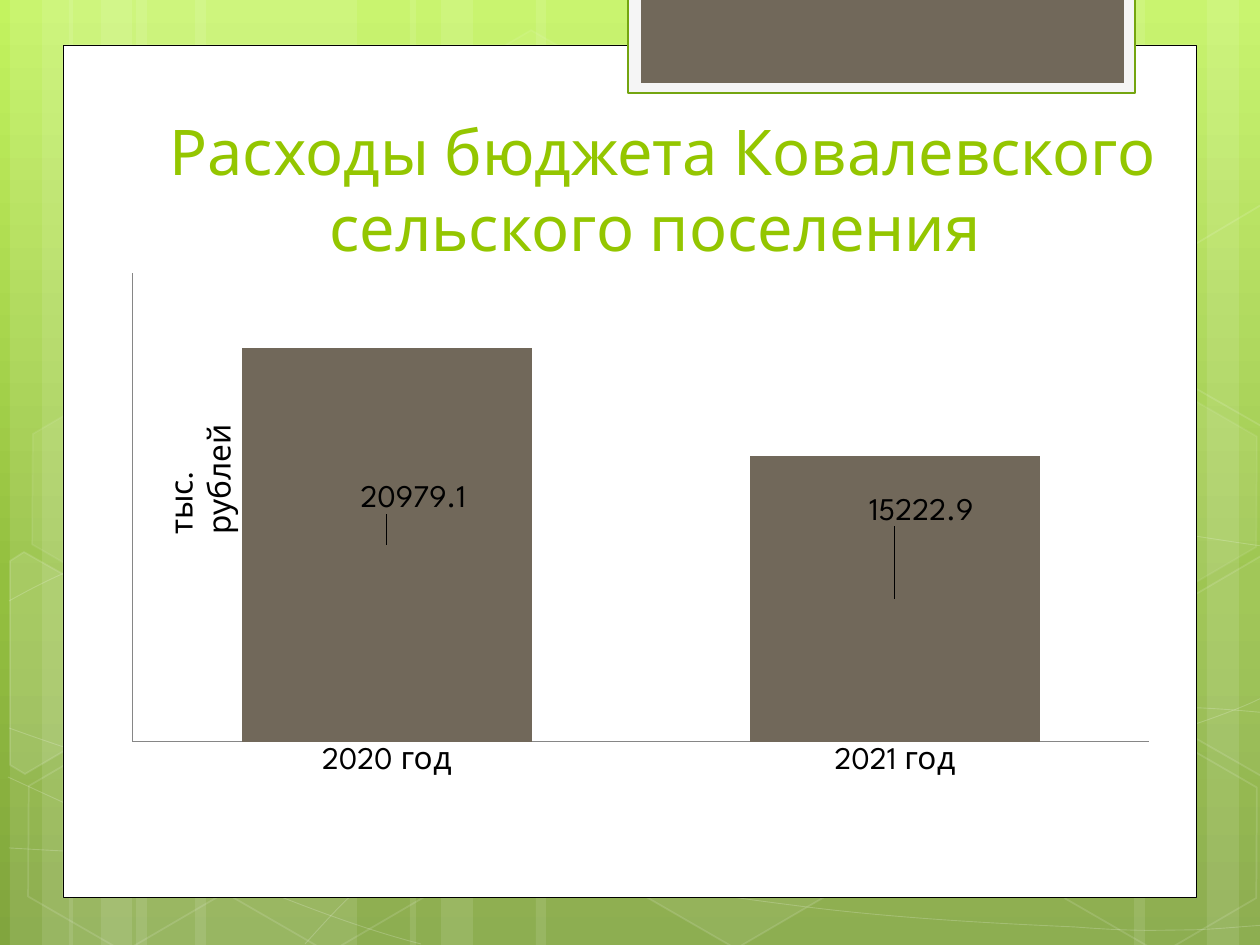
import copy
from pptx import Presentation
from pptx import util as u
from pptx.chart.data import CategoryChartData
from pptx.dml.color import RGBColor
from pptx.enum import chart as ch, shapes, text
from pptx.oxml import parse_xml
from pptx.oxml.ns import nsdecls, qn

PX = 914400 / 126
THEME = {
    "font": "League Spartan", "title": 36, "body": 18,
    "white": "FFFFFF", "black": "000000", "green": "94C600", "edge": "74A510",
    "brown": "71685A", "tab": "F5F5F5", "axis": "868686",
    "sky": [("C3F35F", 0), ("93BF3F", 0.62), ("81A53E", 1)],
}


def paint(sp, fill=None, alpha=100, line=None, width=1, line_alpha=100):
    sp.shadow.inherit = False
    for fmt, color, a in ((sp.fill, fill, alpha), (sp.line.fill, line, line_alpha)):
        if not color:
            fmt.background()
            continue
        fmt.solid()
        fmt.fore_color.rgb = RGBColor.from_string(THEME[color])
        if a < 100:
            clr = fmt._xPr.find(qn("a:solidFill"))[0]
            clr.append(parse_xml(f'<a:alpha {nsdecls("a")} val="{a * 1000}"/>'))
    if line:
        sp.line.width = u.Pt(width)


def write(words, box, size, color, align=text.PP_ALIGN.LEFT,
          anchor=text.MSO_ANCHOR.TOP, rotation=0):
    sp = s.shapes.add_textbox(*[round(v * PX) for v in box])
    sp.rotation = rotation
    tf = sp.text_frame
    tf.word_wrap = True
    tf.vertical_anchor = anchor
    p = tf.paragraphs[0]
    p.alignment = align
    r = p.add_run()
    r.text = words
    r.font.name = THEME["font"]
    r.font.size = u.Pt(THEME[size])
    r.font.color.rgb = RGBColor.from_string(THEME[color])


prs = Presentation()
prs.slide_width, prs.slide_height = round(1260 * PX), round(945 * PX)
s = prs.slides.add_slide(prs.slide_layouts[6])

bg = s.background.fill
bg.gradient()
bg.gradient_angle = 270
gs_list = bg.gradient_stops[0]._gs.getparent()
gs_list.insert(1, copy.deepcopy(gs_list[0]))
for stop, (color, pos) in zip(bg.gradient_stops, THEME["sky"]):
    stop.color.rgb = RGBColor.from_string(color)
    stop.position = pos

stripes = [(136, 221), (10, 63), (42, 105), (195, 221), (69, 63), (101, 105),
           (924, 221), (1207, 63), (1134, 105), (536, 388), (410, 63), (441, 105)]
for x, w in stripes:
    sp = s.shapes.add_shape(shapes.MSO_SHAPE.RECTANGLE, round(x * PX), 0,
                            round(w * PX), prs.slide_height)
    paint(sp, "white", 10)

waves = [
    [(9, 848), (77, 852), (145, 856), (239, 854), (334, 853), (451, 851), (577, 838),
     (703, 825), (882, 801), (998, 777), (1113, 753), (1231, 716), (1269, 694)],
    [(9, 601), (45, 581), (82, 562), (152, 543), (224, 521), (326, 496), (437, 488),
     (549, 479), (685, 478), (824, 488), (963, 497), (1193, 537), (1269, 547)],
    [(8, 777), (160, 847), (311, 916), (421, 944)],
    [(9, 728), (48, 742), (88, 756), (161, 776), (234, 795), (344, 827), (450, 848),
     (554, 869), (687, 892), (791, 905), (896, 919), (1008, 924), (1075, 927),
     (1140, 932), (1158, 930), (1191, 930), (1222, 929), (1246, 926), (1269, 925)],
    [(305, 944), (328, 919), (350, 893), (381, 871), (411, 848), (454, 823), (489, 805),
     (524, 788), (546, 780), (592, 767), (638, 755), (722, 737), (766, 728),
     (811, 719), (818, 719), (857, 717), (896, 713), (958, 709), (1000, 708),
     (1045, 707), (1116, 708), (1116, 708), (1144, 708), (1173, 708), (1201, 708),
     (1223, 709), (1245, 711), (1256, 712), (1268, 713), (1264, 713), (1268, 713)],
]
for wave in waves:
    fb = s.shapes.build_freeform(*wave[0], scale=PX)
    fb.add_line_segments(wave[1:], close=False)
    sp = fb.convert_to_shape()
    outline = next(sp._element.iter(qn("a:path")))
    segments = outline.findall(qn("a:lnTo"))
    for i in range(0, len(segments), 3):
        curve = parse_xml(f'<a:cubicBezTo {nsdecls("a")}/>')
        for segment in segments[i:i + 3]:
            curve.append(segment[0])
            outline.remove(segment)
        outline.append(curve)
    paint(sp, line="white", width=0.5, line_alpha=20)

hexagons = [(421, 45, 4, 8), (626, 742, 6, 12), (14, 745, 0, 12), (18, 393, 7, 8),
            (219, 746, 0, 12), (949, 571, 10, 12), (1051, 747, 0, 12), (1051, 396, 7, 8)]
for x, y, alpha, line_alpha in hexagons:
    sp = s.shapes.add_shape(shapes.MSO_SHAPE.HEXAGON,
                            *[round(v * PX) for v in (x, y, 220, 192)])
    sp.adjustments[0], sp.adjustments[1] = 0.285, 1.155
    sp.rotation = 30
    paint(sp, "white" if alpha else None, alpha, "white", 1, line_alpha)

cut_hexagons = [
    ([(10, 561), (24, 552), (121, 607), (120, 718), (25, 774), (10, 765)], 10),
    ([(1167, 611), (1261, 556), (1271, 562), (1271, 772), (1263, 777), (1167, 722)], 4),
    ([(1167, 261), (1261, 205), (1273, 212), (1271, 422), (1263, 427), (1167, 372)], 0),
]
for points, alpha in cut_hexagons:
    fb = s.shapes.build_freeform(*points[0], scale=PX)
    fb.add_line_segments(points[1:])
    paint(fb.convert_to_shape(), "white" if alpha else None, alpha, "white", 1, 12)

panels = [((63, 45, 1134, 853), "white", "black", 0.5),
          ((628, -3, 507, 96), "tab", "edge", 1.25),
          ((641, -3, 483, 86), "brown", None, 0)]
for box, fill, line, width in panels:
    sp = s.shapes.add_shape(shapes.MSO_SHAPE.RECTANGLE, *[round(v * PX) for v in box])
    paint(sp, fill, line=line, width=width)

write("Расходы бюджета Ковалевского сельского поселения ", (68, 194, 1190, 76),
      "title", "green", text.PP_ALIGN.CENTER, text.MSO_ANCHOR.BOTTOM)

data = CategoryChartData()
data.categories = ["2020 год", "2021 год"]
data.add_series("Series 1", (20979.1, 15222.9))
chart = s.shapes.add_chart(ch.XL_CHART_TYPE.COLUMN_STACKED,
                           *[round(v * PX) for v in (114, 264, 1052, 620)], data).chart
chart.has_legend = chart.has_title = False
chart.font.name = THEME["font"]
chart.font.size = u.Pt(THEME["body"])
chart.font.color.rgb = RGBColor.from_string(THEME["black"])
for axis in (chart.category_axis, chart.value_axis):
    axis.has_major_gridlines = False
    axis.major_tick_mark = axis.minor_tick_mark = ch.XL_TICK_MARK.NONE
    axis.format.line.color.rgb = RGBColor.from_string(THEME["axis"])
    axis.format.line.width = u.Pt(0.5)
chart.value_axis.tick_label_position = ch.XL_TICK_LABEL_POSITION.NONE
chart.value_axis.minimum_scale, chart.value_axis.maximum_scale = 0, 25000

plot = chart.plots[0]
plot.gap_width, plot.overlap = 75, 100
plot.vary_by_categories = False
series = plot.series[0]
series.format.fill.solid()
series.format.fill.fore_color.rgb = RGBColor.from_string(THEME["brown"])
labels = series.data_labels
labels.show_value = True
for i, (x, y) in enumerate([(0.025, -0.073), (0.025, -0.14)]):
    series.points[i].data_label.position = ch.XL_LABEL_POSITION.CENTER
    label = labels._element.findall(qn("c:dLbl"))[i]
    label.find(qn("c:idx")).addnext(parse_xml(
        f'<c:layout {nsdecls("c")}><c:manualLayout><c:x val="{x}"/><c:y val="{y}"/>'
        '</c:manualLayout></c:layout>'))
for leader in labels._element.findall(qn("c:showLeaderLines")):
    labels._element.remove(leader)
labels._element.append(parse_xml(
    f'<c:extLst {nsdecls("c")}><c:ext uri="{{CE6537A1-D6FC-4f65-9D91-7224C49458BB}}" '
    'xmlns:c15="http://schemas.microsoft.com/office/drawing/2012/chart">'
    '<c15:showLeaderLines val="0"/></c:ext></c:extLst>'))

area = chart._chartSpace.chart.plotArea
for old in area.findall(qn("c:layout")):
    area.remove(old)
area.insert(0, parse_xml(
    f'<c:layout {nsdecls("c")}><c:manualLayout><c:layoutTarget val="inner"/>'
    '<c:xMode val="edge"/><c:yMode val="edge"/><c:x val="0.018"/><c:y val="0.014"/>'
    '<c:w val="0.966"/><c:h val="0.757"/></c:manualLayout></c:layout>'))

write("тыс. рублей", (88, 430, 184, 50), "body", "black", rotation=270)

prs.save("out.pptx")
